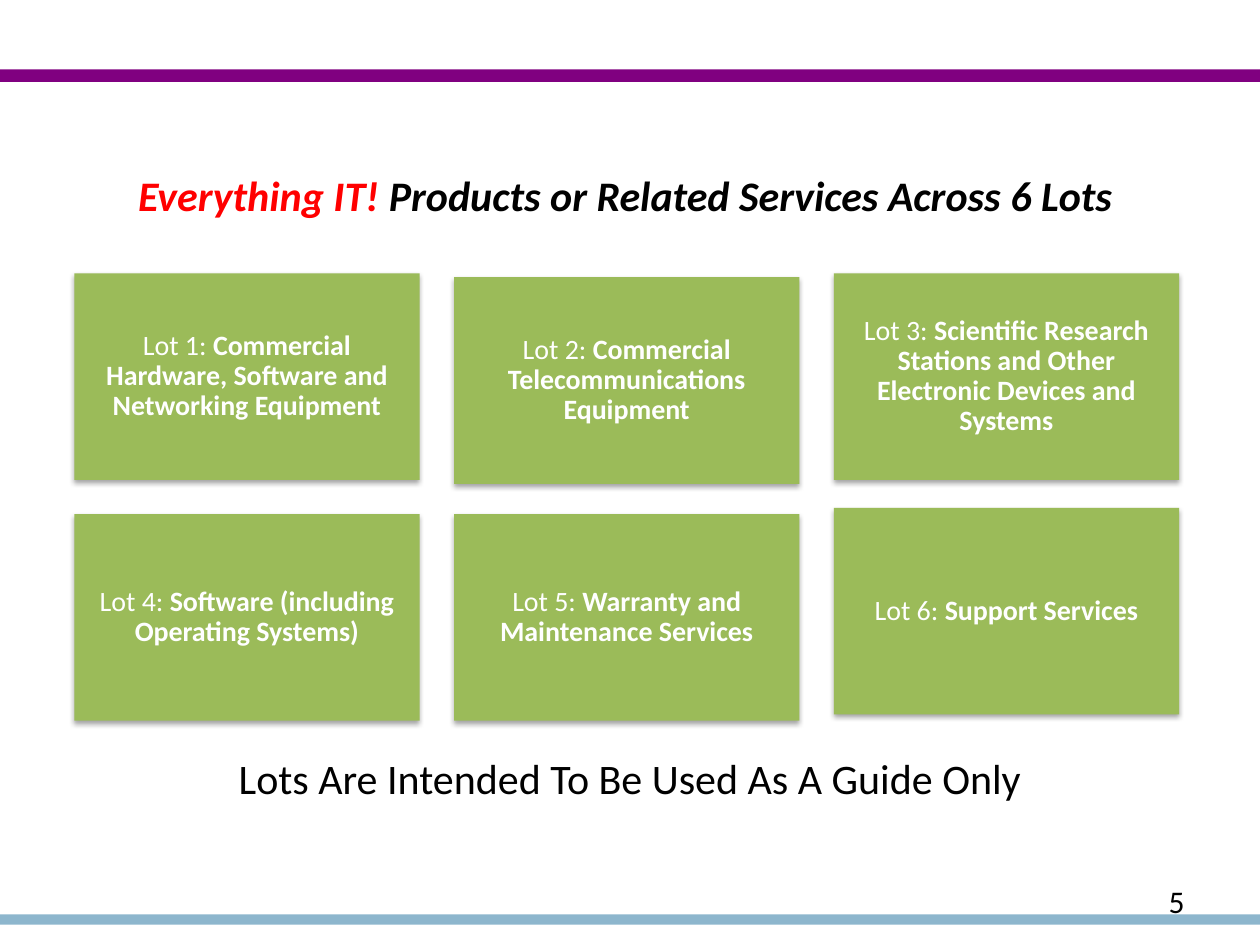
"""Build the slide that lists the six lots of IT products and services."""
from typing import NamedTuple

import pptx
import pptx.dml.color
import pptx.enum.shapes
import pptx.enum.text
import pptx.oxml
import pptx.oxml.ns
import pptx.util

Pt = pptx.util.Pt
ALIGN = pptx.enum.text.PP_ALIGN
ANCHOR = pptx.enum.text.MSO_ANCHOR
HUES = {
    "purple": "800080",
    "blue": "8DB6CD",
    "green": "9BBB59",
    "red": "FF0000",
    "black": "000000",
    "white": "FFFFFF",
}
LEFT, STEP = 42.5, 217
WIDE, HIGH = 197.3, 118.1


class Run(NamedTuple):
    text: str
    hue: str = "black"
    bold: bool = False
    slant: bool = False


class Lot(NamedTuple):
    name: str
    top: float


LOTS = [
    Lot("Commercial Hardware, Software and Networking Equipment", 156.2),
    Lot("Commercial Telecommunications Equipment", 158.4),
    Lot("Scientific Research Stations and Other Electronic Devices and Systems", 156.2),
    Lot("Software (including Operating Systems)", 293.8),
    Lot("Warranty and Maintenance Services", 293.8),
    Lot("Support Services", 290.2),
]


def color(hue: str) -> pptx.dml.color.RGBColor:
    """Return the named colour."""
    return pptx.dml.color.RGBColor.from_string(HUES[hue])


def write(shape, runs: list[Run], *, size: float, align=ALIGN.CENTER,
          anchor=ANCHOR.TOP, inset: float | None = None, lead: float = 1.0) -> None:
    """Fill a shape with one formatted paragraph."""
    frame = shape.text_frame
    frame.word_wrap = True
    frame.vertical_anchor = anchor
    if inset is not None:
        frame.margin_left = frame.margin_right = Pt(inset)
        frame.margin_top = frame.margin_bottom = Pt(inset)
    para = frame.paragraphs[0]
    para.alignment = align
    para.line_spacing = lead
    for item in runs:
        run = para.add_run()
        run.text = item.text
        font = run.font
        font.name = "Calibri"
        font.size = Pt(size)
        font.bold = item.bold
        font.italic = item.slant
        font.color.rgb = color(item.hue)


def box(slide, left: float, top: float, wide: float, high: float):
    """Add an empty text box."""
    return slide.shapes.add_textbox(Pt(left), Pt(top), Pt(wide), Pt(high))


def rect(slide, left: float, top: float, wide: float, high: float, hue: str):
    """Add a plain filled rectangle."""
    kind = pptx.enum.shapes.MSO_SHAPE.RECTANGLE
    shape = slide.shapes.add_shape(kind, Pt(left), Pt(top), Pt(wide), Pt(high))
    shape.shadow.inherit = False
    shape.fill.solid()
    shape.fill.fore_color.rgb = color(hue)
    shape.line.fill.background()
    return shape


def shade(shape) -> None:
    """Give a shape a soft shadow below it."""
    glow = pptx.oxml.parse_xml(
        f'<a:outerShdw {pptx.oxml.ns.nsdecls("a")} blurRad="{Pt(3.1)}" '
        f'dist="{Pt(1.8)}" dir="5400000" rotWithShape="0">'
        f'<a:srgbClr val="{HUES["black"]}"><a:alpha val="35000"/></a:srgbClr>'
        '</a:outerShdw>')
    shape.element.spPr.find(pptx.oxml.ns.qn("a:effectLst")).append(glow)


def card(slide, index: int, lot: Lot) -> None:
    """Draw one numbered lot in its column."""
    shape = rect(slide, LEFT + index % 3 * STEP, lot.top, WIDE, HIGH, "green")
    shade(shape)
    runs = [Run(f"Lot {index + 1}: ", "white"), Run(lot.name, "white", True)]
    write(shape, runs, size=16, anchor=ANCHOR.MIDDLE, inset=5, lead=0.9)


def main() -> None:
    """Build and save the deck."""
    deck = pptx.Presentation()
    deck.slide_width, deck.slide_height = Pt(720), Pt(540)
    slide = deck.slides.add_slide(deck.slide_layouts[6])
    rect(slide, 0, 39.6, 720, 7.2, "purple")
    rect(slide, 0, 522.5, 720, 5.8, "blue")
    title = [Run("Everything IT! ", "red", True, True),
             Run("Products or Related Services Across 6 Lots ", "black", True, True)]
    write(box(slide, 36, 84.2, 648, 54), title, size=24, anchor=ANCHOR.MIDDLE)
    note = [Run("Lots Are Intended To Be Used As A Guide Only")]
    write(box(slide, 36, 426.2, 648, 56.2), note, size=24)
    write(box(slide, 516.2, 500.4, 167.8, 28.8), [Run("5")], size=18, align=ALIGN.RIGHT)
    for index, lot in enumerate(LOTS):
        card(slide, index, lot)
    deck.save("out.pptx")


if __name__ == "__main__":
    main()
